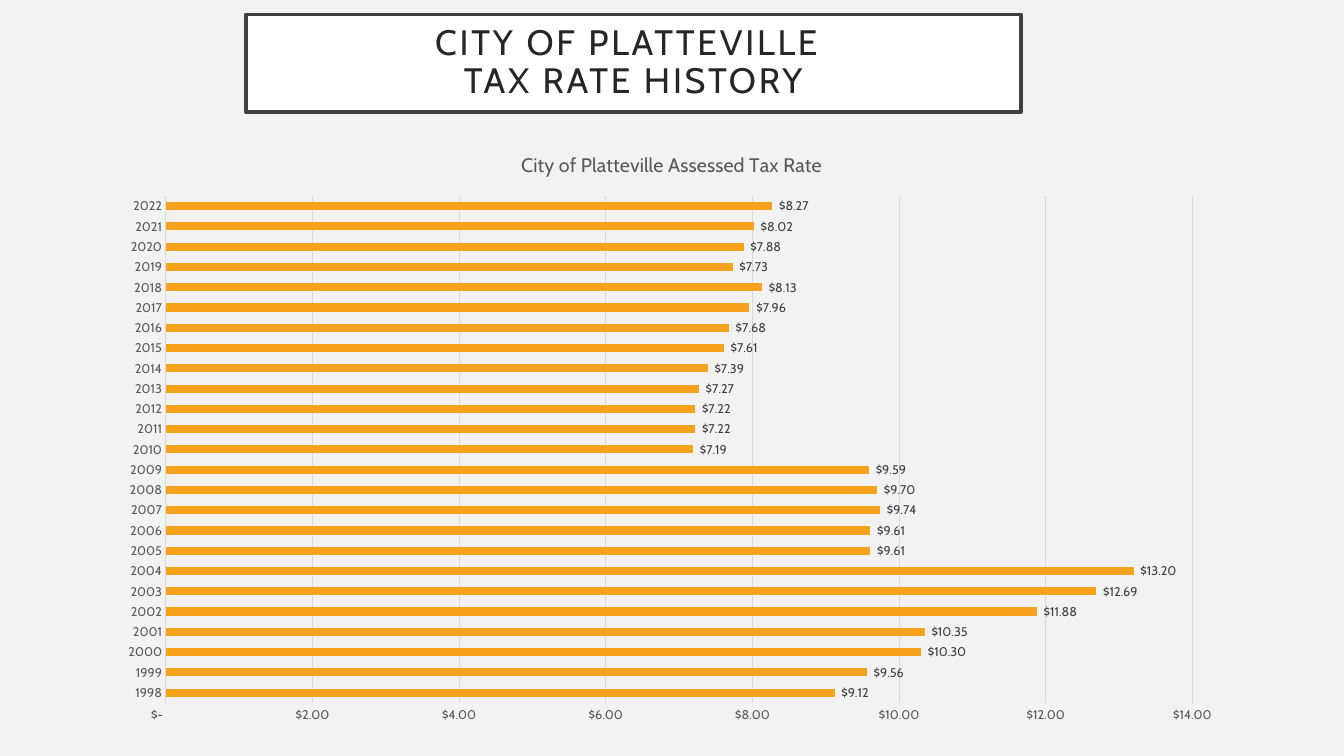
import pptx
import pptx.chart.data
import pptx.dml.color
import pptx.enum.chart
import pptx.enum.shapes
import pptx.enum.text
import pptx.oxml
import pptx.oxml.ns
import pptx.util

Cm, Pt = pptx.util.Cm, pptx.util.Pt

# Content
HEADING = "CITY OF PLATTEVILLE \vTAX RATE HISTORY"
CHART_TITLE = "City of Platteville Assessed Tax Rate"
FIRST_YEAR = 1998
TAX_RATES = [
    9.12, 9.56, 10.30, 10.35, 11.88, 12.69, 13.20, 9.61, 9.61, 9.74, 9.70, 9.59,
    7.19, 7.22, 7.22, 7.27, 7.39, 7.61, 7.68, 7.96, 8.13, 7.73, 7.88, 8.02, 8.27,
]
DOLLARS = '_("$"* #,##0.00_);_("$"* \\(#,##0.00\\);_("$"* "-"??_);_(@_)'

THEME = {
    "font": "Cabin",
    "background": "F2F2F2",
    "panel": "FFFFFF",
    "frame": "404040",
    "heading": "262626",
    "muted": "595959",
    "label": "404040",
    "grid": "D9D9D9",
    "bar": "F6A21D",
    "heading_size": 25.2,
    "title_size": 14,
    "small_size": 9,
}

# Left, top, width, height in centimetres
HEADING_AREA = (6.2, 0.36, 19.53, 2.46)
CHART_AREA = (2.67, 3.28, 28.52, 15.24)
# Plot area as shares of the chart
PLOT_AREA = {"x": 0.053, "y": 0.109, "w": 0.907, "h": 0.838}


def colour(name):
    return pptx.dml.color.RGBColor.from_string(THEME[name])


def style_font(font, size, ink):
    font.name = THEME["font"]
    font.size = Pt(THEME[size])
    font.color.rgb = colour(ink)
    font.bold = False


def style_line(line, ink, width):
    line.color.rgb = colour(ink)
    line.width = Pt(width)


def add_heading(page):
    box = page.shapes.add_shape(
        pptx.enum.shapes.MSO_SHAPE.RECTANGLE, *map(Cm, HEADING_AREA))
    box.shadow.inherit = False
    box.fill.solid()
    box.fill.fore_color.rgb = colour("panel")
    style_line(box.line, "frame", 2.5)

    frame = box.text_frame
    frame.word_wrap = True
    frame.vertical_anchor = pptx.enum.text.MSO_ANCHOR.MIDDLE
    frame.margin_left = frame.margin_right = Cm(0.5)
    frame.margin_top = frame.margin_bottom = Cm(0.5)
    para = frame.paragraphs[0]
    para.text = HEADING
    para.alignment = pptx.enum.text.PP_ALIGN.CENTER
    para.line_spacing = 0.9
    for span in para.runs:
        style_font(span.font, "heading_size", "heading")
        span.font._element.set("spc", "200")


def place_plot(chart):
    plot_area = chart.element.find(".//" + pptx.oxml.ns.qn("c:plotArea"))
    for layout in plot_area.findall(pptx.oxml.ns.qn("c:layout")):
        plot_area.remove(layout)
    modes = '<c:xMode val="edge"/><c:yMode val="edge"/>'
    sizes = "".join(f'<c:{key} val="{share}"/>' for key, share in PLOT_AREA.items())
    plot_area.insert(0, pptx.oxml.parse_xml(
        f'<c:layout {pptx.oxml.ns.nsdecls("c")}><c:manualLayout>'
        f'<c:layoutTarget val="inner"/>{modes}{sizes}</c:manualLayout></c:layout>'))


def add_rate_chart(page):
    data = pptx.chart.data.CategoryChartData(number_format=DOLLARS)
    data.categories = [str(FIRST_YEAR + step) for step in range(len(TAX_RATES))]
    data.add_series("Series 1", TAX_RATES)
    chart = page.shapes.add_chart(
        pptx.enum.chart.XL_CHART_TYPE.BAR_CLUSTERED, *map(Cm, CHART_AREA), data).chart
    chart.has_legend = False
    style_font(chart.font, "small_size", "muted")

    # Title
    chart.has_title = True
    para = chart.chart_title.text_frame.paragraphs[0]
    para.text = CHART_TITLE
    style_font(para.runs[0].font, "title_size", "muted")

    # Axes
    years, rates = chart.category_axis, chart.value_axis
    for axis in (years, rates):
        axis.major_tick_mark = pptx.enum.chart.XL_TICK_MARK.NONE
        axis.minor_tick_mark = pptx.enum.chart.XL_TICK_MARK.NONE
        style_font(axis.tick_labels.font, "small_size", "muted")
    years.has_major_gridlines = False
    style_line(years.format.line, "grid", 0.75)
    rates.minimum_scale, rates.maximum_scale, rates.major_unit = 0, 14, 2
    rates.has_major_gridlines = True
    style_line(rates.major_gridlines.format.line, "grid", 0.75)
    rates.format.line.fill.background()
    rates.tick_labels.number_format = DOLLARS
    rates.tick_labels.number_format_is_linked = False

    # Bars and their labels
    plot = chart.plots[0]
    plot.gap_width = 150
    plot.vary_by_categories = False
    bars = plot.series[0]
    bars.format.fill.solid()
    bars.format.fill.fore_color.rgb = colour("bar")
    labels = bars.data_labels
    labels.show_value = True
    labels.number_format = DOLLARS
    labels.number_format_is_linked = False
    labels.position = pptx.enum.chart.XL_LABEL_POSITION.OUTSIDE_END
    style_font(labels.font, "small_size", "label")

    place_plot(chart)


def main():
    deck = pptx.Presentation()
    deck.slide_width, deck.slide_height = Cm(33.87), Cm(19.05)
    page = deck.slides.add_slide(deck.slide_layouts[6])
    page.background.fill.solid()
    page.background.fill.fore_color.rgb = colour("background")
    add_heading(page)
    add_rate_chart(page)
    deck.save("out.pptx")


if __name__ == "__main__":
    main()
